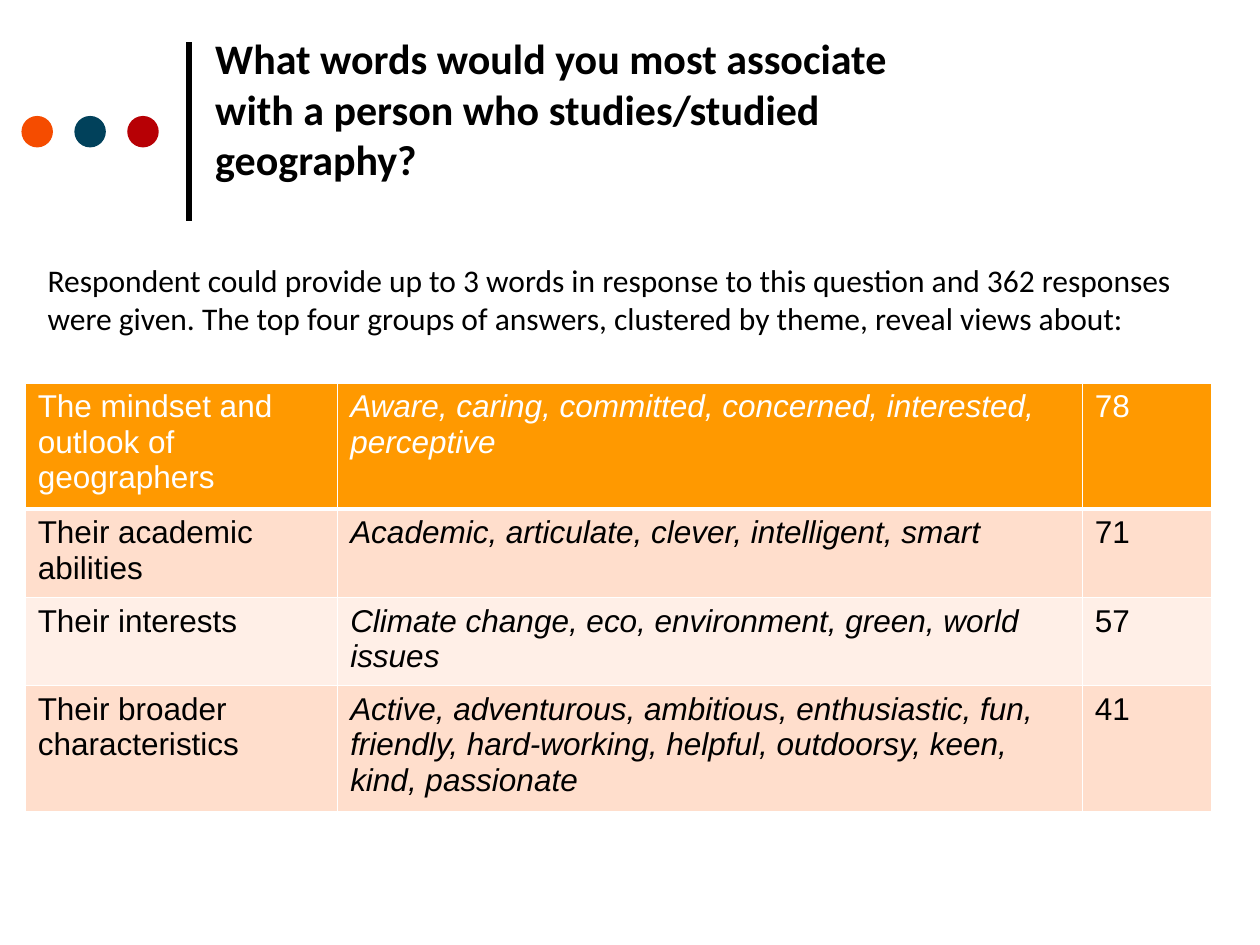
import pptx
import pptx.dml.color
import pptx.enum.shapes
import pptx.enum.text
import pptx.oxml
import pptx.oxml.ns
import pptx.util

RGBColor = pptx.dml.color.RGBColor
Inches = pptx.util.Inches
Pt = pptx.util.Pt

BLACK = RGBColor(0x00, 0x00, 0x00)
WHITE = RGBColor(0xFF, 0xFF, 0xFF)
HEADER_FILL = RGBColor(0xFF, 0x99, 0x00)
BAND_FILLS = [RGBColor(0xFF, 0xEF, 0xE7), RGBColor(0xFF, 0xDE, 0xCC)]
DOT_COLORS = [RGBColor(0xF5, 0x4C, 0x00), RGBColor(0x01, 0x41, 0x5B), RGBColor(0xB7, 0x00, 0x05)]

TITLE = "What words would you most associate with a person who studies/studied geography?"
INTRO = (
    "Respondent could provide up to 3 words in response to this question and 362 responses "
    "were given. The top four groups of answers, clustered by theme, reveal views about:"
)
THEMES = [
    ("The mindset and outlook of geographers",
     "Aware, caring, committed, concerned, interested, perceptive", "78"),
    ("Their academic abilities", "Academic, articulate, clever, intelligent, smart", "71"),
    ("Their interests", "Climate change, eco, environment, green, world issues", "57"),
    ("Their broader characteristics",
     "Active, adventurous, ambitious, enthusiastic, fun, friendly, hard-working, helpful, "
     "outdoorsy, keen, kind, passionate", "41"),
]
ROW_LINES = [3, 2, 2, 3]
LINE_HEIGHT = 0.28
ROW_PADDING = 0.1
COLUMN_WIDTHS = [2.48, 5.91, 1.03]
WORDS_COLUMN = 1


def set_font(para, name, size, color, bold=False, italic=False):
    font = para.font
    font.name, font.size = name, Pt(size)
    font.bold, font.italic = bold, italic
    font.color.rgb = color


def add_text(slide, text, left, top, width, height, size, bold=False):
    box = slide.shapes.add_textbox(Inches(left), Inches(top), Inches(width), Inches(height))
    frame = box.text_frame
    frame.word_wrap = True
    frame.vertical_anchor = pptx.enum.text.MSO_ANCHOR.TOP
    para = frame.paragraphs[0]
    para.text = text
    set_font(para, "Calibri", size, BLACK, bold)


def set_borders(cell, widths):
    properties = cell._tc.get_or_add_tcPr()
    for index, (side, width) in enumerate(widths.items()):
        border = pptx.oxml.parse_xml(
            f'<a:ln{side} {pptx.oxml.ns.nsdecls("a")} w="{Pt(width)}">'
            f'<a:solidFill><a:srgbClr val="{WHITE}"/></a:solidFill></a:ln{side}>'
        )
        properties.insert(index, border)


def add_ornament(slide):
    rule = slide.shapes.add_connector(
        pptx.enum.shapes.MSO_CONNECTOR.STRAIGHT,
        Inches(1.5), Inches(1.75), Inches(1.5), Inches(0.33),
    )
    rule.line.color.rgb = BLACK
    rule.line.width = Pt(3)
    rule._element.spPr.append(
        pptx.oxml.parse_xml(f'<a:effectLst {pptx.oxml.ns.nsdecls("a")}/>')
    )
    for index, color in enumerate(DOT_COLORS):
        dot = slide.shapes.add_shape(
            pptx.enum.shapes.MSO_SHAPE.OVAL,
            Inches(0.17 + 0.42 * index), Inches(0.92), Inches(0.25), Inches(0.25),
        )
        dot.shadow.inherit = False
        dot.fill.solid()
        dot.fill.fore_color.rgb = color
        dot.line.fill.background()


def add_themes_table(slide):
    heights = [lines * LINE_HEIGHT + ROW_PADDING for lines in ROW_LINES]
    table = slide.shapes.add_table(
        len(THEMES), len(COLUMN_WIDTHS), Inches(0.2), Inches(3.04),
        Inches(sum(COLUMN_WIDTHS)), Inches(sum(heights)),
    ).table
    for column, width in zip(table.columns, COLUMN_WIDTHS):
        column.width = Inches(width)
    for row, (texts, height) in enumerate(zip(THEMES, heights)):
        table.rows[row].height = Inches(height)
        for column, text in enumerate(texts):
            cell = table.cell(row, column)
            cell.fill.solid()
            cell.fill.fore_color.rgb = BAND_FILLS[row % 2] if row else HEADER_FILL
            set_borders(cell, {"L": 1, "R": 1, "T": 3 if row == 1 else 1, "B": 1 if row else 3})
            para = cell.text_frame.paragraphs[0]
            para.text = text
            set_font(para, "Arial", 18, BLACK if row else WHITE, italic=column == WORDS_COLUMN)


def main():
    deck = pptx.Presentation()
    deck.slide_width, deck.slide_height = Inches(10), Inches(7.5)
    page = deck.slides.add_slide(deck.slide_layouts[6])
    add_ornament(page)
    add_text(page, TITLE, 1.61, 0.21, 5.98, 1.57, 24, bold=True)
    add_text(page, INTRO, 0.28, 2.02, 9.53, 0.75, 18)
    add_themes_table(page)
    deck.save("out.pptx")


if __name__ == "__main__":
    main()
